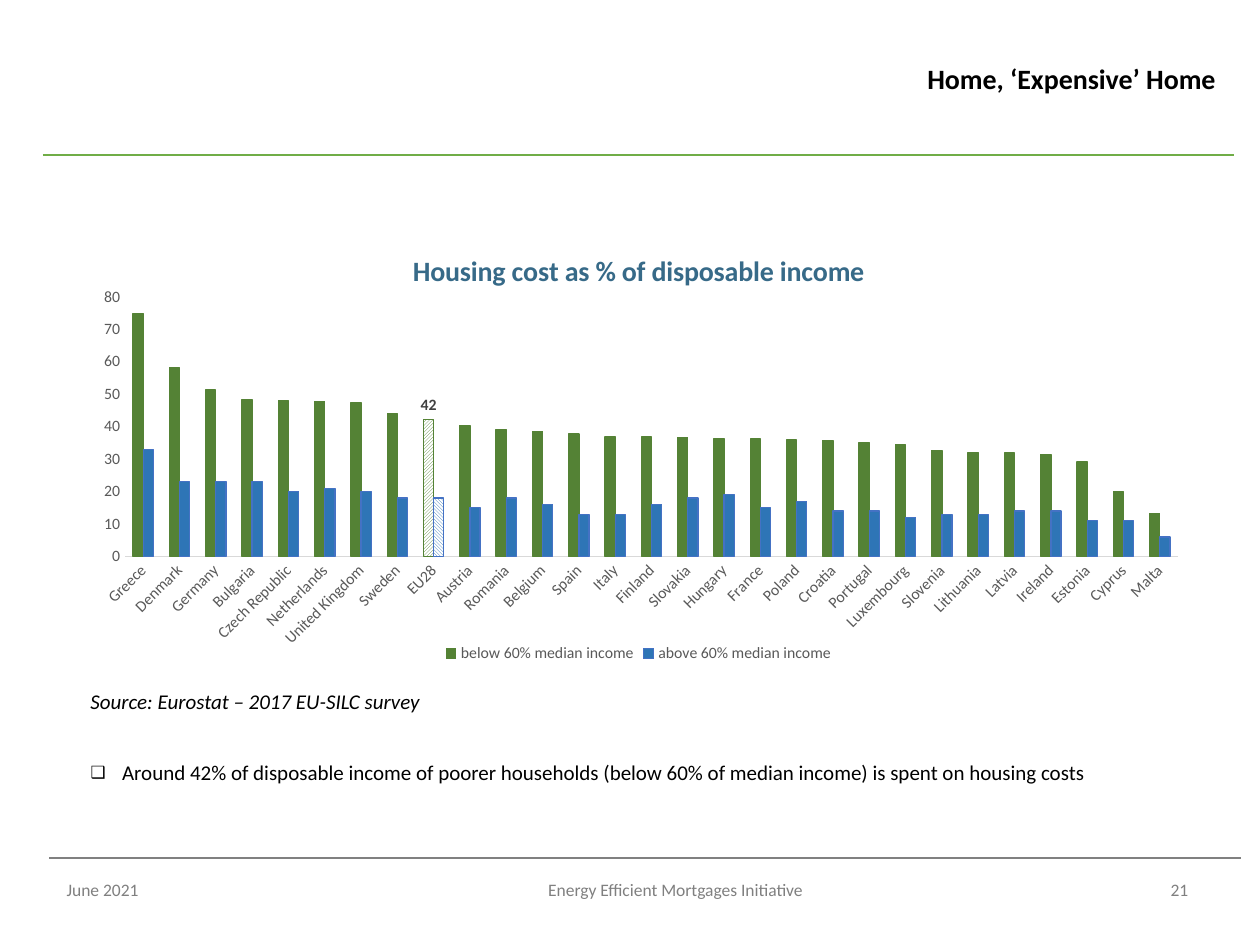
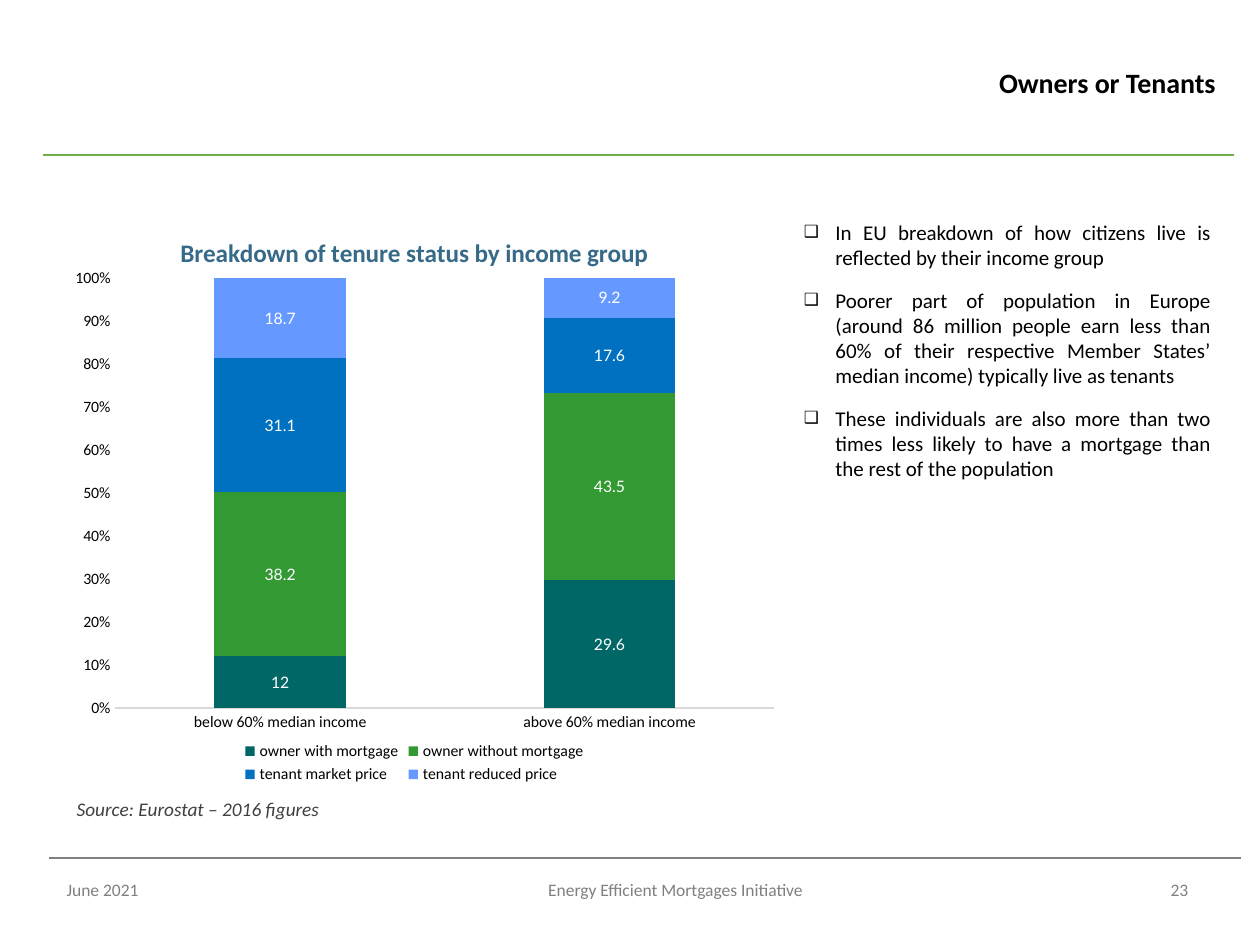
from dataclasses import dataclass
from typing import NamedTuple

from lxml.etree import SubElement
from pptx import Presentation
from pptx.chart.data import CategoryChartData
from pptx.dml.color import RGBColor
from pptx.enum.chart import XL_CHART_TYPE, XL_LABEL_POSITION, XL_LEGEND_POSITION, XL_TICK_MARK
from pptx.enum.dml import MSO_PATTERN
from pptx.enum.shapes import MSO_CONNECTOR
from pptx.enum.text import MSO_ANCHOR, MSO_AUTO_SIZE, PP_ALIGN
from pptx.oxml import parse_xml
from pptx.oxml.ns import nsdecls, qn
from pptx.util import Pt


@dataclass(frozen=True)
class Theme:
    face: str = "Calibri"
    chart_face: str = "Lato"
    black: str = "000000"
    white: str = "FFFFFF"
    gray: str = "808080"
    dark: str = "404040"
    axis: str = "595959"
    grid: str = "D9D9D9"
    green: str = "70AD47"
    head: str = "376A88"
    title: float = 16
    body: float = 12
    note: float = 11
    foot: float = 10
    tick: float = 9
    rule: float = 0.79
    thin: float = 0.75


class Spot(NamedTuple):
    x: float
    y: float
    w: float
    h: float

    def points(self) -> list:
        return [Pt(n) for n in self]


class Style(NamedTuple):
    size: float
    color: str
    bold: bool = False
    slant: bool = False
    face: str = "Calibri"


class Rule(NamedTuple):
    left: float
    right: float
    y: float
    color: str


class Foot(NamedTuple):
    text: str
    spot: Spot
    align: PP_ALIGN


@dataclass
class Bar:
    name: str
    color: str
    edge: str
    values: list


@dataclass
class Graph:
    kind: XL_CHART_TYPE
    spot: Spot
    title: str
    size: float
    color: str
    plot: tuple
    gap: int
    overlap: int
    top: float
    step: float
    form: str
    cats: list
    bars: list


T = Theme()
RULES = [Rule(24.5, 704.9, 88.6, T.green), Rule(28.1, 709.2, 490.3, T.gray)]
DATE = Foot("June 2021", Spot(31, 499, 81.4, 28.8), PP_ALIGN.LEFT)
NAME = Foot("Energy Efficient Mortgages Initiative", Spot(203.8, 499, 364.3, 28.8), PP_ALIGN.CENTER)
PAGE = Spot(653.8, 499, 40.3, 28.8)


def rgb(code: str) -> RGBColor:
    return RGBColor.from_string(code)


def dress(font, style: Style) -> None:
    font.name, font.size = style.face, Pt(style.size)
    font.bold, font.italic = style.bold, style.slant
    font.color.rgb = rgb(style.color)


def write(para, text: str, style: Style, align: PP_ALIGN = PP_ALIGN.LEFT) -> None:
    para.alignment = align
    run = para.add_run()
    run.text = text
    dress(run.font, style)


def place(shape, spot: Spot) -> None:
    shape.left, shape.top, shape.width, shape.height = spot.points()


def add_text(slide, text: str, spot: Spot, style: Style, align: PP_ALIGN = PP_ALIGN.LEFT) -> None:
    frame = slide.shapes.add_textbox(*spot.points()).text_frame
    frame.word_wrap = True
    write(frame.paragraphs[0], text, style, align)


def add_rule(slide, rule: Rule) -> None:
    line = slide.shapes.add_connector(
        MSO_CONNECTOR.STRAIGHT, Pt(rule.left), Pt(rule.y), Pt(rule.right), Pt(rule.y))
    line.line.color.rgb = rgb(rule.color)
    line.line.width = Pt(T.rule)
    SubElement(line._element.spPr, qn("a:effectLst"))


def add_page(deck, title: str, top: float, number: int):
    """Add a slide with its title, rules and footer."""
    slide = deck.slides.add_slide(deck.slide_layouts[1])
    head = slide.shapes.title
    place(head, Spot(202.3, top, 499.7, 85))
    head.text_frame.vertical_anchor = MSO_ANCHOR.MIDDLE
    write(head.text_frame.paragraphs[0], title, Style(T.title, T.black, True), PP_ALIGN.RIGHT)
    for rule in RULES:
        add_rule(slide, rule)
    for foot in (DATE, NAME, Foot(str(number), PAGE, PP_ALIGN.CENTER)):
        add_text(slide, foot.text, foot.spot, Style(T.foot, T.gray), foot.align)
    return slide


def add_list(slide, items: list, spot: Spot, align: PP_ALIGN) -> None:
    body = slide.placeholders[1]
    place(body, spot)
    frame = body.text_frame
    frame.auto_size = MSO_AUTO_SIZE.NONE
    for i, item in enumerate(items):
        para = frame.add_paragraph() if i else frame.paragraphs[0]
        props = para._p.get_or_add_pPr()
        props.set("marL", str(Pt(18)))
        props.set("indent", str(-Pt(18)))
        SubElement(props, qn("a:buSzPct")).set("val", "80000")
        SubElement(props, qn("a:buChar")).set("char", "❑")
        para.space_before = Pt(10 if i else 0)
        write(para, item, Style(T.body, T.black), align)


def set_plot(chart, plot: tuple) -> None:
    """Fix the inner plot area as shares of the chart."""
    area = chart._chartSpace.chart.plotArea
    for old in area.findall(qn("c:layout")):
        area.remove(old)
    sizes = "".join(f'<c:{k} val="{v}"/>' for k, v in zip("xywh", plot))
    area.insert(0, parse_xml(
        f'<c:layout {nsdecls("c")}><c:manualLayout><c:layoutTarget val="inner"/>'
        f'<c:xMode val="edge"/><c:yMode val="edge"/>{sizes}</c:manualLayout></c:layout>'))


def add_graph(slide, graph: Graph):
    data = CategoryChartData(number_format="General")
    data.categories = graph.cats
    for bar in graph.bars:
        data.add_series(bar.name, bar.values)
    chart = slide.shapes.add_chart(graph.kind, *graph.spot.points(), data).chart
    dress(chart.font, Style(T.foot, T.black, face=T.chart_face))
    set_plot(chart, graph.plot)

    # Title and legend
    small = Style(T.tick, graph.color)
    chart.has_title = True
    write(chart.chart_title.text_frame.paragraphs[0], graph.title,
          Style(graph.size, T.head, True), PP_ALIGN.CENTER)
    chart.chart_title.include_in_layout = False
    chart.has_legend = True
    chart.legend.position = XL_LEGEND_POSITION.BOTTOM
    chart.legend.include_in_layout = False
    dress(chart.legend.font, small)

    # Axes
    cat, val = chart.category_axis, chart.value_axis
    for axis in (cat, val):
        axis.major_tick_mark = axis.minor_tick_mark = XL_TICK_MARK.NONE
        axis.has_major_gridlines = False
        dress(axis.tick_labels.font, small)
    cat.format.line.color.rgb = rgb(T.grid)
    cat.format.line.width = Pt(T.thin)
    val.format.line.fill.background()
    val.minimum_scale, val.maximum_scale, val.major_unit = 0, graph.top, graph.step
    val.tick_labels.number_format = graph.form
    val.tick_labels.number_format_is_linked = False

    # Bars
    plot = chart.plots[0]
    plot.vary_by_categories = False
    plot.gap_width, plot.overlap = graph.gap, graph.overlap
    for bar, series in zip(graph.bars, plot.series):
        series.format.fill.solid()
        series.format.fill.fore_color.rgb = rgb(bar.color)
        set_edge(series, bar.edge)
    return chart


def set_edge(item, color: str) -> None:
    line = item.format.line
    if color:
        line.color.rgb = rgb(color)
        line.width = Pt(T.thin)
    else:
        line.fill.background()


def hatch(point, bar: Bar, pattern: MSO_PATTERN) -> None:
    fill = point.format.fill
    fill.patterned()
    fill.pattern = pattern
    fill.fore_color.rgb, fill.back_color.rgb = rgb(bar.color), rgb(T.white)
    set_edge(point, bar.edge)


COST = Graph(
    XL_CHART_TYPE.COLUMN_CLUSTERED, Spot(44.6, 132.5, 640.8, 249.1),
    "Housing cost as % of disposable income", T.title, T.axis,
    (0.042, 0.149, 0.939, 0.596), 157, 0, 80, 10, "0",
    ["Greece", "Denmark", "Germany", "Bulgaria", "Czech Republic", "Netherlands",
     "United Kingdom", "Sweden", "EU28", "Austria", "Romania", "Belgium", "Spain", "Italy",
     "Finland", "Slovakia", "Hungary", "France", "Poland", "Croatia", "Portugal",
     "Luxembourg", "Slovenia", "Lithuania", "Latvia", "Ireland", "Estonia", "Cyprus", "Malta"],
    [Bar("below 60% median income", "548235", "548235",
         [74.8, 58.2, 51.3, 48.4, 48, 47.8, 47.4, 44.1, 42.2, 40.3, 39.2, 38.5, 37.7, 36.8,
          36.8, 36.7, 36.3, 36.2, 35.9, 35.7, 35.1, 34.4, 32.7, 32, 31.9, 31.3, 29.1, 20, 13.3]),
     Bar("above 60% median income", "2E75B6", "4472C4",
         [33, 23, 23, 23, 20, 21, 20, 18, 18, 15, 18, 16, 13, 13, 16, 18, 19, 15, 17, 14, 14,
          12, 13, 13, 14, 14, 11, 11, 6])])

TENURE = Graph(
    XL_CHART_TYPE.COLUMN_STACKED_100, Spot(31, 121.7, 411.8, 329),
    "Breakdown of tenure status by income group", 14.4, T.black,
    (0.085, 0.113, 0.915, 0.747), 150, 100, 1, 0.1, "0%",
    ["below 60% median income", "above 60% median income"],
    [Bar("owner with mortgage", "006666", "", [12, 29.6]),
     Bar("owner without mortgage", "339933", "", [38.2, 43.5]),
     Bar("tenant market price", "0070C0", "", [31.1, 17.6]),
     Bar("tenant reduced price", "6699FF", "", [18.7, 9.2])])


def cost_page(deck) -> None:
    slide = add_page(deck, "Home, ‘Expensive’ Home", 2.2, 21)
    chart = add_graph(slide, COST)
    chart.category_axis.tick_labels.font._element.getparent().getparent().getparent().find(
        qn("a:bodyPr")).set("rot", "-2700000")

    # The EU average stands out by hatching and a label
    mean = COST.cats.index("EU28")
    bands = (MSO_PATTERN.DARK_UPWARD_DIAGONAL, MSO_PATTERN.DARK_DOWNWARD_DIAGONAL)
    rows = chart.plots[0].series
    for bar, series, band in zip(COST.bars, rows, bands):
        hatch(series.points[mean], bar, band)
    marks = rows[0].data_labels
    marks.show_value = False
    marks.number_format, marks.number_format_is_linked = "0", False
    label = rows[0].points[mean].data_label
    dress(label.font, Style(T.tick, T.dark, True))
    label.position = XL_LABEL_POSITION.OUTSIDE_END
    form = parse_xml(f'<c:numFmt {nsdecls("c")} formatCode="0" sourceLinked="0"/>')
    marks._element.find(qn("c:dLbl")).insert(1, form)

    add_text(slide, "Source: Eurostat – 2017 EU-SILC survey", Spot(44.6, 390.2, 299.5, 21.6),
             Style(T.body, T.black, slant=True))
    add_list(slide, ["Around 42% of disposable income of poorer households "
                     "(below 60% of median income) is spent on housing costs"],
             Spot(44.6, 430.6, 613.4, 28.8), PP_ALIGN.LEFT)


def tenure_page(deck) -> None:
    slide = add_page(deck, "Owners or Tenants", 4.3, 23)
    for series in add_graph(slide, TENURE).plots[0].series:
        marks = series.data_labels
        marks.show_value = True
        marks.position = XL_LABEL_POSITION.CENTER
        dress(marks.font, Style(T.tick, T.white, face=T.chart_face))
    add_text(slide, "Source: Eurostat – 2016 figures", Spot(36.7, 452.2, 189.4, 22.3),
             Style(T.note, T.dark, slant=True))
    add_list(slide, [
        "In EU breakdown of how citizens live is reflected by their income group",
        "Poorer part of population in Europe (around 86 million people earn less than 60% of "
        "their respective Member States’ median income) typically live as tenants",
        "These individuals are also more than two times less likely to have a mortgage than "
        "the rest of the population"], Spot(452.2, 121.7, 247, 190.1), PP_ALIGN.JUSTIFY)


def main() -> None:
    deck = Presentation()
    deck.slide_width, deck.slide_height = Pt(720), Pt(540)
    cost_page(deck)
    tenure_page(deck)
    deck.save("out.pptx")


if __name__ == "__main__":
    main()
